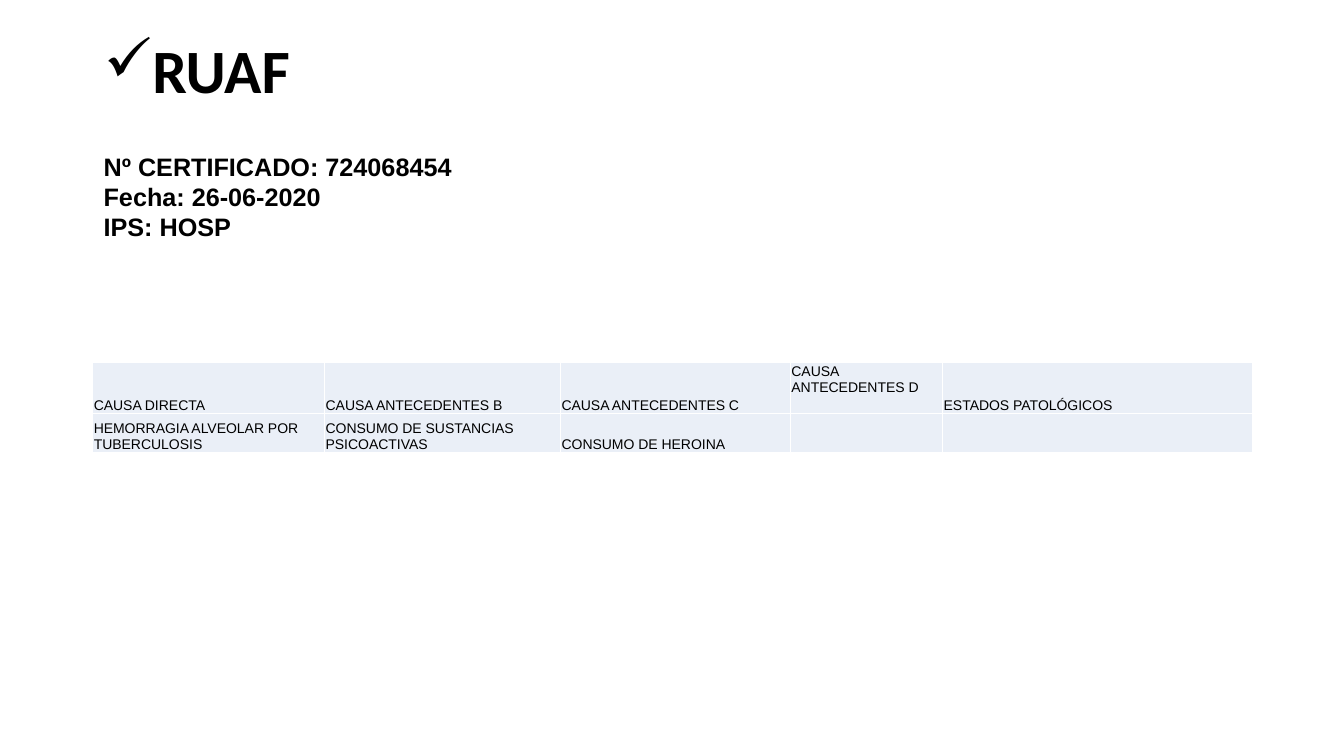
from lxml.etree import SubElement
from pptx import Presentation
from pptx.dml.color import RGBColor
from pptx.enum.text import MSO_ANCHOR, PP_ALIGN
from pptx.oxml import parse_xml
from pptx.oxml.ns import nsdecls, qn
from pptx.util import Inches, Pt

BLACK, WHITE, PALE_BLUE = "000000", "FFFFFF", "EAEFF7"
LEFT, WIDTH = 0.93, 11.5


def color(value):
    return RGBColor.from_string(value)


def style(paragraph, **font_values):
    for name, value in font_values.items():
        setattr(paragraph.font, name, value)
    paragraph.font.color.rgb = color(BLACK)


deck = Presentation()
deck.slide_width, deck.slide_height = Inches(13.33), Inches(7.5)
slide = deck.slides.add_slide(deck.slide_layouts[5])

# Title with a check mark as bullet
title = slide.shapes.title
title.left, title.top = Inches(LEFT), 0
title.width, title.height = Inches(WIDTH), Inches(1.45)
title.text_frame.vertical_anchor = MSO_ANCHOR.MIDDLE
heading = title.text_frame.paragraphs[0]
heading.text = "RUAF"
heading.alignment = PP_ALIGN.LEFT
heading.line_spacing = 0.9
style(heading, name="Calibri", size=Pt(44), bold=True)
heading_format = heading._p.get_or_add_pPr()
heading_format.set("marL", str(Inches(0.31)))
heading_format.set("indent", str(-Inches(0.31)))
check_mark = parse_xml(f'<a:buChar {nsdecls("a")} char="✓"/>')
heading_format.insert_element_before(check_mark, "a:tabLst", "a:defRPr", "a:extLst")

# Certificate details
certificate = slide.shapes.add_textbox(
    Inches(LEFT), Inches(1.45), Inches(9.5), Inches(1.01)).text_frame
certificate.word_wrap = True
certificate.text = "Nº CERTIFICADO: 724068454\nFecha: 26-06-2020\nIPS: HOSP"
for detail in certificate.paragraphs:
    style(detail, name="Arial", size=Pt(18), bold=True)

# Causes of death
causes = [
    ["CAUSA DIRECTA", "CAUSA ANTECEDENTES B", "CAUSA ANTECEDENTES C",
     "CAUSA ANTECEDENTES D", "ESTADOS PATOLÓGICOS"],
    ["HEMORRAGIA ALVEOLAR POR TUBERCULOSIS",
     "CONSUMO DE SUSTANCIAS PSICOACTIVAS", "CONSUMO DE HEROINA", "", ""],
]
column_widths = [2.3, 2.34, 2.28, 1.51, 3.07]
row_heights = [0.5, 0.39]
cause_table = slide.shapes.add_table(
    len(causes), len(column_widths), Inches(0.92), Inches(3.6),
    Inches(WIDTH), Inches(sum(row_heights))).table
cause_table.first_row = cause_table.horz_banding = False
for column, width in zip(cause_table.columns, column_widths):
    column.width = Inches(width)
for row, height in zip(cause_table.rows, row_heights):
    row.height = Inches(height)

cell_format = {
    "margin_left": Inches(0.01), "margin_right": Inches(0.01),
    "margin_top": Inches(0.01), "margin_bottom": 0,
    "vertical_anchor": MSO_ANCHOR.BOTTOM,
}
for row, row_causes in zip(cause_table.rows, causes):
    for cell, cause in zip(row.cells, row_causes):
        for name, value in cell_format.items():
            setattr(cell, name, value)
        cell.text = cause
        style(cell.text_frame.paragraphs[0], name="Arial", size=Pt(10), bold=False)
        # Borders go before the fill in the cell's properties
        cell_properties = cell._tc.get_or_add_tcPr()
        for side in ("a:lnL", "a:lnR", "a:lnT", "a:lnB"):
            border = SubElement(cell_properties, qn(side), w=str(Pt(1)))
            border_fill = SubElement(border, qn("a:solidFill"))
            SubElement(border_fill, qn("a:srgbClr"), val=WHITE)
        cell.fill.solid()
        cell.fill.fore_color.rgb = color(PALE_BLUE)
cause_table.cell(0, 3).vertical_anchor = MSO_ANCHOR.TOP

deck.save("out.pptx")
